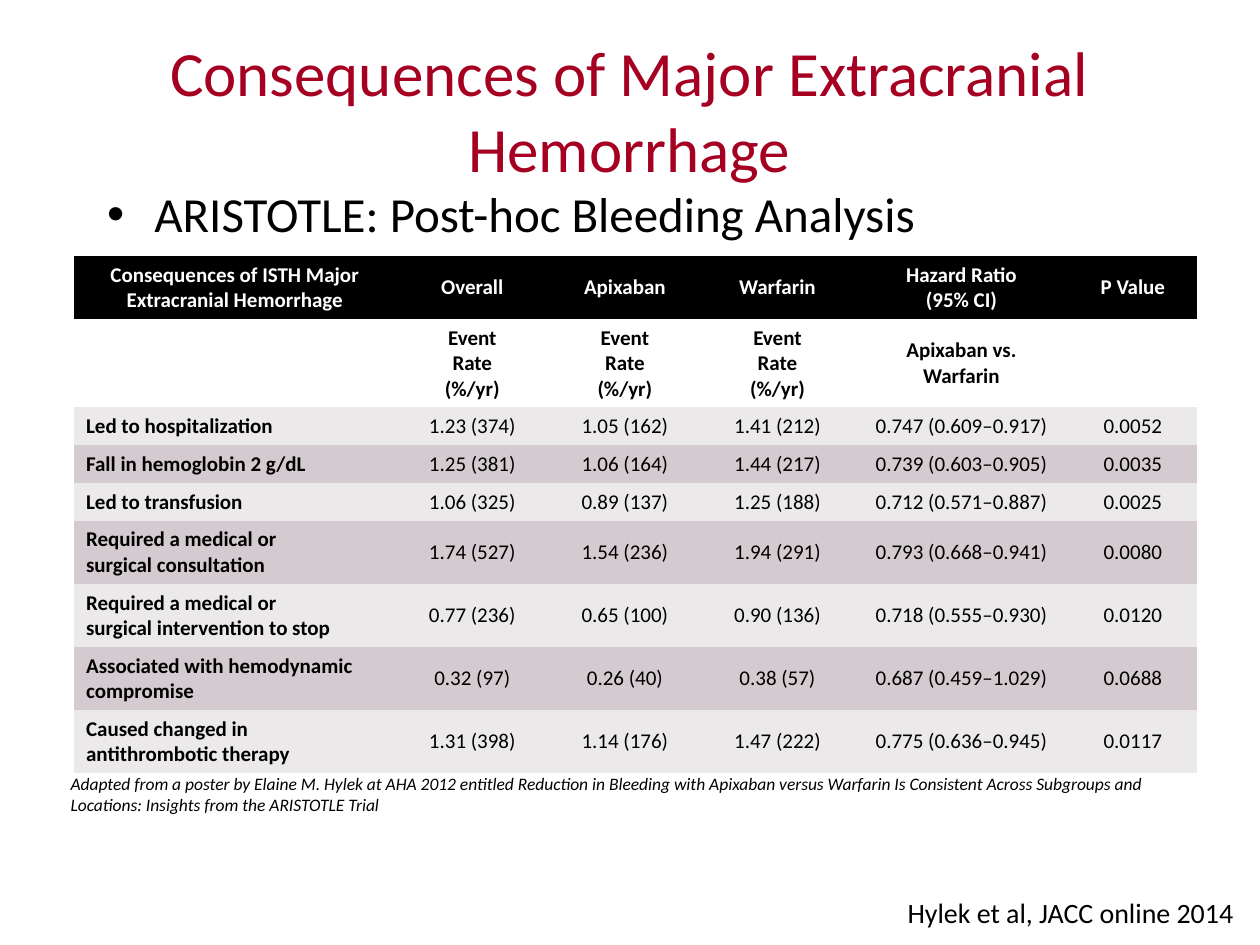
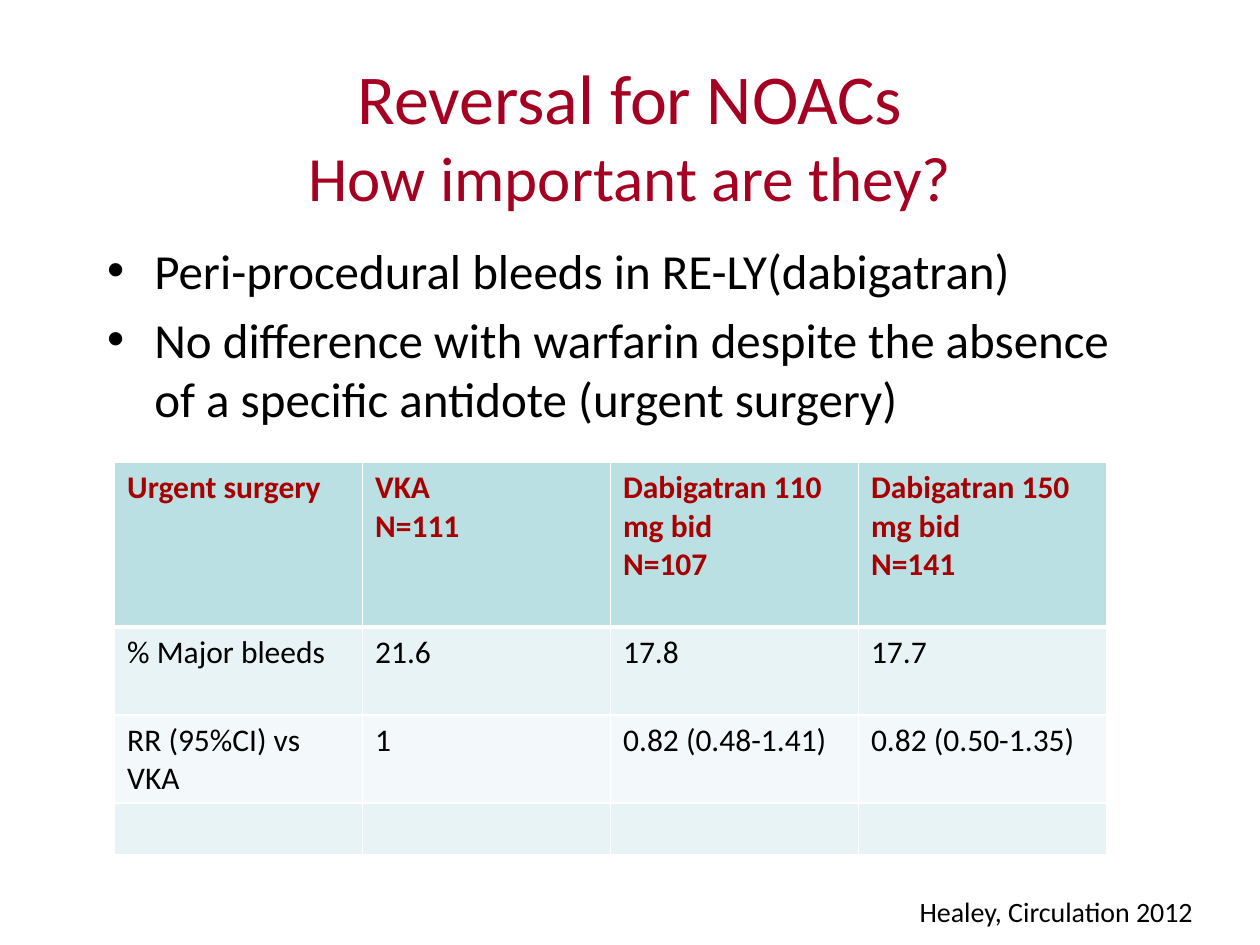
import pptx
import pptx.util
import pptx.dml.color
import pptx.enum.text
import pptx.oxml
import pptx.oxml.ns

Pt = pptx.util.Pt
ALIGN = pptx.enum.text.PP_ALIGN
ANCHOR = pptx.enum.text.MSO_ANCHOR
FIT = pptx.enum.text.MSO_AUTO_SIZE

FONT = "Calibri"
RED = "A50021"
BLACK = "000000"
WHITE = "FFFFFF"
DARK = "A80000"
AQUA = "BBE0E3"
MIST = "E7F3F4"
PALE = "F3F9FA"
GREY = "EBE9EA"
MAUVE = "D3CBD0"
PLAIN = "{2D5ABB26-0587-4C30-8999-92F81FD0307C}"


def hue(color, code):
    color.rgb = pptx.dml.color.RGBColor.from_string(code)


def write(frame, lines, size, code, align=None, bold=False, slant=False, gap=0):
    for i, line in enumerate(lines):
        para = frame.paragraphs[0] if i == 0 else frame.add_paragraph()
        para.space_before = Pt(gap if i else 0)
        if align is not None:
            para.alignment = align
        run = para.add_run()
        run.text = line
        run.font.name = FONT
        run.font.size = Pt(size)
        run.font.bold = bold
        run.font.italic = slant
        hue(run.font.color, code)


deck = pptx.Presentation()
deck.slide_width = Pt(720)
deck.slide_height = Pt(540)

pages = [
    {
        "title": [("Consequences of Major Extracranial Hemorrhage", 36)],
        "head": (35.3, 19.4, 648.7, 86.4),
        "list": ["ARISTOTLE: Post-hoc Bleeding Analysis"],
        "top": 101.5,
        "cite": "Hylek et al, JACC online 2014",
        "foot": (393.8, 508.3, 318.2, 18),
        "side": ALIGN.RIGHT,
    },
    {
        "title": [("Reversal for NOACs", 40), ("How important are they?", 36)],
        "head": (54, 31.7, 612, 90),
        "list": [
            "Peri-procedural bleeds in RE-LY(dabigatran)",
            "No difference with warfarin despite the absence of a specific antidote (urgent surgery)",
        ],
        "top": 133.9,
        "cite": "Healey, Circulation 2012",
        "foot": (518.4, 507.6, 172.8, 26.6),
        "side": ALIGN.LEFT,
    },
]

slides = []
for page in pages:
    slide = deck.slides.add_slide(deck.slide_layouts[1])
    slides.append(slide)

    title = slide.shapes.title
    title.left, title.top, title.width, title.height = [Pt(n) for n in page["head"]]
    frame = title.text_frame
    frame.auto_size = FIT.NONE
    frame.vertical_anchor = ANCHOR.MIDDLE
    para = frame.paragraphs[0]
    para.alignment = ALIGN.CENTER
    for i, (line, size) in enumerate(page["title"]):
        if i:
            para.add_line_break()
        run = para.add_run()
        run.text = line
        run.font.name = FONT
        run.font.size = Pt(size)
        hue(run.font.color, RED)

    body = slide.placeholders[1]
    body.left, body.top, body.width, body.height = Pt(54), Pt(page["top"]), Pt(612), Pt(362.9)
    body.text_frame.auto_size = FIT.NONE
    write(body.text_frame, page["list"], 28, BLACK, gap=5.6)

    foot = slide.shapes.add_textbox(*[Pt(n) for n in page["foot"]]).text_frame
    foot.word_wrap = page["side"] == ALIGN.RIGHT
    write(foot, [page["cite"]], 16, BLACK, page["side"])

rate = "Event|Rate|(%/yr)"
risks = [
    ["Consequences of ISTH Major Extracranial Hemorrhage", "Overall", "Apixaban", "Warfarin",
     "Hazard Ratio|(95% CI)", "P Value"],
    ["", rate, rate, rate, "Apixaban vs. Warfarin", ""],
    ["Led to hospitalization", "1.23 (374)", "1.05 (162)", "1.41 (212)",
     "0.747 (0.609–0.917)", "0.0052"],
    ["Fall in hemoglobin 2 g/dL", "1.25 (381)", "1.06 (164)", "1.44 (217)",
     "0.739 (0.603–0.905)", "0.0035"],
    ["Led to transfusion", "1.06 (325)", "0.89 (137)", "1.25 (188)",
     "0.712 (0.571–0.887)", "0.0025"],
    ["Required a medical or|surgical consultation", "1.74 (527)", "1.54 (236)", "1.94 (291)",
     "0.793 (0.668–0.941)", "0.0080"],
    ["Required a medical or|surgical intervention to stop", "0.77 (236)", "0.65 (100)",
     "0.90 (136)", "0.718 (0.555–0.930)", "0.0120"],
    ["Associated with hemodynamic compromise", "0.32 (97)", "0.26 (40)", "0.38 (57)",
     "0.687 (0.459–1.029)", "0.0688"],
    ["Caused changed in antithrombotic therapy", "1.31 (398)", "1.14 (176)", "1.47 (222)",
     "0.775 (0.636–0.945)", "0.0117"],
]
shape = slides[0].shapes.add_table(9, 6, Pt(42), Pt(146.2), Pt(642), Pt(295))
grid = shape.table
style = grid._tbl.tblPr.find(pptx.oxml.ns.qn("a:tableStyleId"))
style.text = PLAIN
for col, wide in zip(grid.columns, [184.3, 87.2, 87.2, 87.2, 123.1, 72.8]):
    col.width = Pt(wide)
for row, high in zip(grid.rows, [36, 50.4] + [21.6] * 3 + [36] * 4):
    row.height = Pt(high)
for r, row in enumerate(risks):
    for c, text in enumerate(row):
        cell = grid.cell(r, c)
        cell.vertical_anchor = ANCHOR.MIDDLE
        cell.fill.solid()
        hue(cell.fill.fore_color, [BLACK, WHITE][r] if r < 2 else [GREY, MAUVE][r % 2])
        if text:
            left = c == 0 and r > 1
            write(cell.text_frame, text.split("|"), 12, BLACK if r else WHITE,
                  ALIGN.LEFT if left else ALIGN.CENTER, bold=r < 2 or c == 0)

note = slides[0].shapes.add_textbox(Pt(40.3), Pt(441.4), Pt(642.2), Pt(24.5)).text_frame
note.word_wrap = True
note.vertical_anchor = ANCHOR.BOTTOM
note.margin_left = note.margin_right = note.margin_top = note.margin_bottom = 0
write(note, ["Adapted from a poster by Elaine M. Hylek at AHA 2012 entitled Reduction in Bleeding "
             "with Apixaban versus Warfarin Is Consistent Across Subgroups and Locations: "
             "Insights from the ARISTOTLE Trial"], 10, BLACK, slant=True)

bleeds = [
    ["Urgent surgery", "VKA|N=111", "Dabigatran 110 mg bid|N=107", "Dabigatran 150 mg bid|N=141"],
    ["% Major bleeds", "21.6", "17.8", "17.7"],
    ["RR (95%CI) vs VKA", "1", "0.82 (0.48-1.41)", "0.82 (0.50-1.35)"],
    ["", "", "", ""],
]
shape = slides[1].shapes.add_table(4, 4, Pt(65.5), Pt(264.2), Pt(566.8), Pt(224))
grid = shape.table
for col in grid.columns:
    col.width = Pt(141.7)
for row, high in zip(grid.rows, [94, 50.3, 50.3, 29.4]):
    row.height = Pt(high)
for r, row in enumerate(bleeds):
    for c, text in enumerate(row):
        cell = grid.cell(r, c)
        props = cell._tc.get_or_add_tcPr()
        for edge in "LRTB":
            thick = 3 if (r, edge) in [(0, "B"), (1, "T")] else 1
            props.append(pptx.oxml.parse_xml(
                f'<a:ln{edge} xmlns:a="http://schemas.openxmlformats.org/drawingml/2006/main" '
                f'w="{Pt(thick)}"><a:solidFill><a:srgbClr val="{WHITE}"/></a:solidFill></a:ln{edge}>'))
        cell.fill.solid()
        hue(cell.fill.fore_color, [AQUA, MIST, PALE, MIST][r])
        if text:
            write(cell.text_frame, text.split("|"), 18, BLACK if r else DARK, bold=r == 0)

deck.save("out.pptx")
